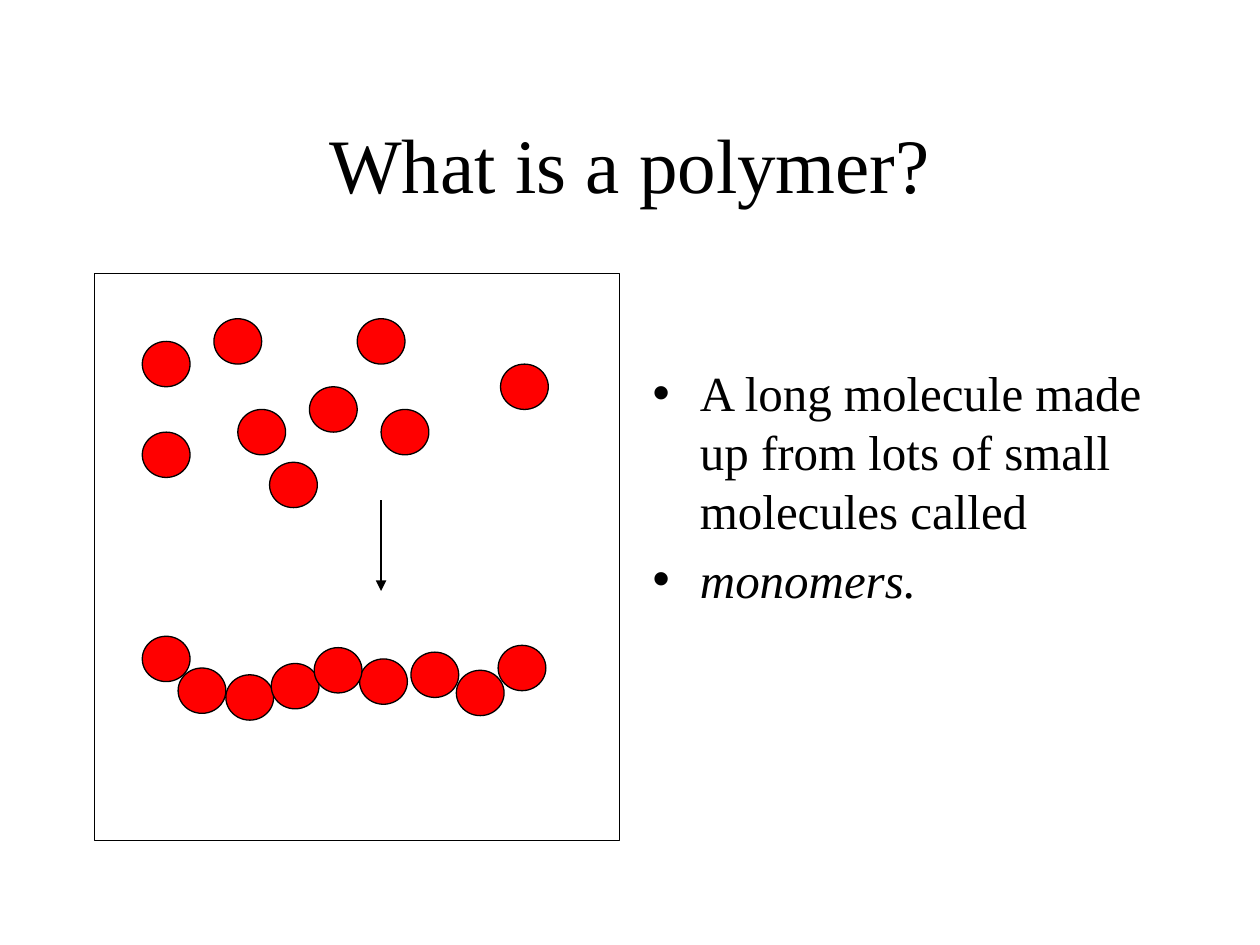
"""Build a slide that shows monomers joining into a polymer."""
from lxml import etree
from pptx import Presentation
from pptx import util as u
from pptx.dml.color import RGBColor
from pptx.enum import shapes, text
from pptx.oxml.ns import qn

COLOURS = {"ink": "000000", "paper": "FFFFFF", "monomer": "FF0000"}
FONT = "Times New Roman"
PANEL_LEFT, PANEL_TOP, PANEL_WIDTH, PANEL_HEIGHT = 0.75, 2.17, 4.17, 4.5
COLUMNS, ROWS = 22, 25
COLUMN, ROW = PANEL_WIDTH / COLUMNS, PANEL_HEIGHT / ROWS

# (column, row) of each circle's top left corner
CHAIN = [(2, 16), (3.5, 17.4), (11.1, 17), (5.5, 17.7), (7.4, 17.2), (9.2, 16.5)]
FREE = [(5, 2), (9, 5), (11, 2), (6, 6), (12, 6), (17, 4), (7.33, 8.33), (2, 3), (2, 7)]
CHAIN_END = [(16.9, 16.4), (15.15, 17.5), (13.25, 16.7)]


def add_figure(figures, preset, column, row, columns, rows, fill):
    shape = figures.add_shape(
        preset,
        u.Inches(PANEL_LEFT + column * COLUMN), u.Inches(PANEL_TOP + row * ROW),
        u.Inches(columns * COLUMN), u.Inches(rows * ROW))
    shape.shadow.inherit = False
    shape.fill.solid()
    shape.fill.fore_color.rgb = RGBColor.from_string(COLOURS[fill])
    shape.line.color.rgb = RGBColor.from_string(COLOURS["ink"])
    shape.line.width = u.Pt(0.75)


def write(paragraph, wording, size, italic=False):
    run = paragraph.add_run()
    run.text = wording
    run.font.name = FONT
    run.font.size = u.Pt(size)
    run.font.italic = italic
    run.font.color.rgb = RGBColor.from_string(COLOURS["ink"])


presentation = Presentation()
presentation.slide_width, presentation.slide_height = u.Inches(10), u.Inches(7.5)
slide = presentation.slides.add_slide(presentation.slide_layouts[1])
slide.background.fill.solid()
slide.background.fill.fore_color.rgb = RGBColor.from_string(COLOURS["paper"])

title, body = slide.placeholders
for placeholder, box in ((title, (0.75, 0.67, 8.5, 1.25)), (body, (5.08, 2.83, 4.17, 2.75))):
    placeholder.left, placeholder.top, placeholder.width, placeholder.height = map(u.Inches, box)
    placeholder.text_frame.auto_size = text.MSO_AUTO_SIZE.NONE

title.text_frame.vertical_anchor = text.MSO_ANCHOR.MIDDLE
title.text_frame.paragraphs[0].alignment = text.PP_ALIGN.CENTER
write(title.text_frame.paragraphs[0], "What is a polymer?", 44)

write(body.text_frame.paragraphs[0],
      "A long molecule made up from lots of small molecules called", 28)
write(body.text_frame.add_paragraph(), "monomers.", 28, italic=True)

figures = slide.shapes.add_group_shape().shapes
add_figure(figures, shapes.MSO_SHAPE.RECTANGLE, 0, 0, COLUMNS, ROWS, "paper")
for column, row in CHAIN + FREE + CHAIN_END:
    add_figure(figures, shapes.MSO_SHAPE.OVAL, column, row, 2, 2, "monomer")

arrow_x = u.Inches(PANEL_LEFT + 12 * COLUMN)
arrow = figures.add_connector(
    shapes.MSO_CONNECTOR.STRAIGHT,
    arrow_x, u.Inches(PANEL_TOP + 10 * ROW), arrow_x, u.Inches(PANEL_TOP + 14 * ROW))
arrow.line.color.rgb = RGBColor.from_string(COLOURS["ink"])
arrow.line.width = u.Pt(0.75)
etree.SubElement(arrow.line._get_or_add_ln(), qn("a:tailEnd"), type="triangle")
etree.SubElement(arrow._element.spPr, qn("a:effectLst"))

presentation.save("out.pptx")
